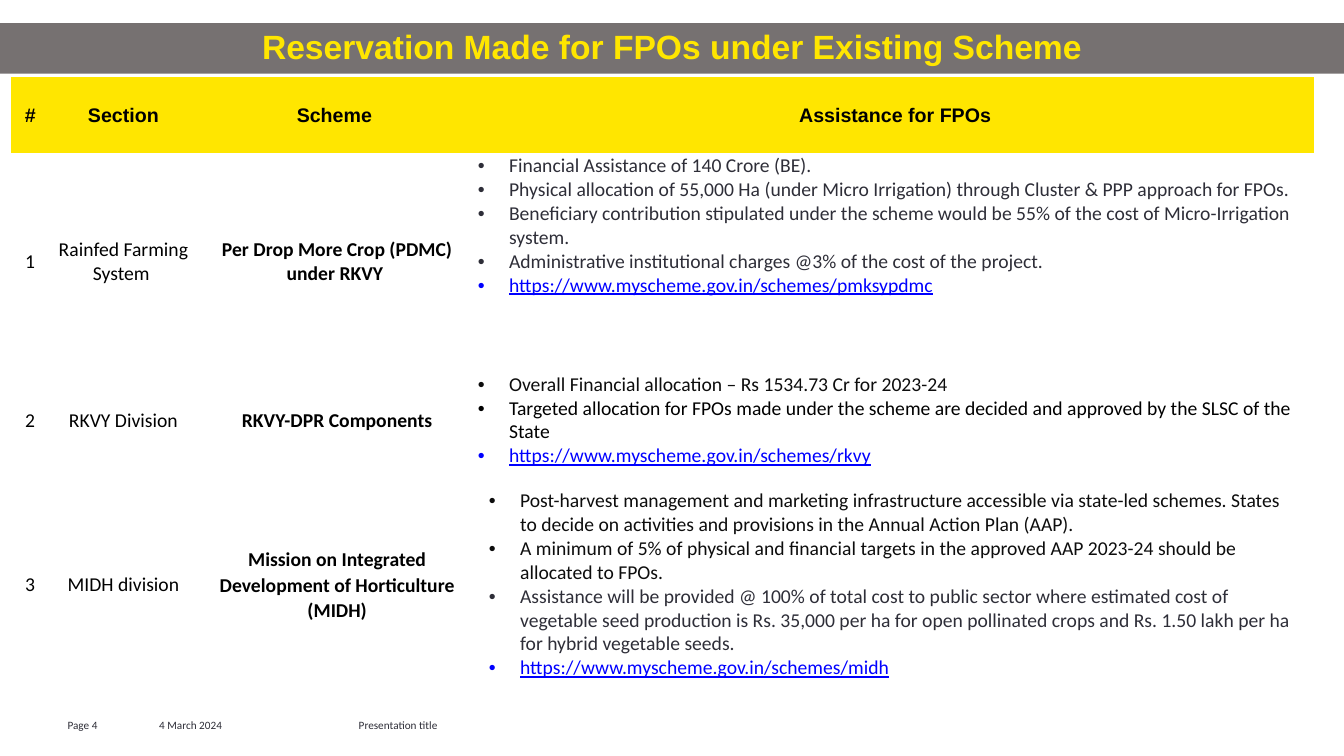
from pptx import Presentation
from pptx.dml.color import RGBColor
from pptx.enum.text import MSO_ANCHOR as Anchor, MSO_AUTO_SIZE as AutoSize, PP_ALIGN as Align
from pptx.oxml.ns import qn
from pptx.util import Inches, Pt
from lxml.etree import SubElement

YELLOW = RGBColor(0xFF, 0xE6, 0x00)
GREY = RGBColor(0x76, 0x71, 0x71)
WHITE = RGBColor(0xFF, 0xFF, 0xFF)
BLACK = RGBColor(0x00, 0x00, 0x00)
NEAR_BLACK = RGBColor(0x0D, 0x0D, 0x0D)
CHARCOAL = RGBColor(0x2E, 0x2E, 0x38)
LINK_BLUE = RGBColor(0x00, 0x00, 0xFF)

PLAIN_TABLE_STYLE = "{2D5ABB26-0587-4C30-8999-92F81FD0307C}"
TITLE = "Reservation Made for FPOs under Existing Scheme"
COLUMN_WIDTHS = [0.38, 1.47, 2.77, 8.3]
ROW_HEIGHTS = [0.76, 2.15, 0.99, 2.28]
HEADINGS = ["#", "Section", "Scheme ", "Assistance for FPOs"]
NARROW_MARGINS = (0.01, 0.01, 0.01, 0)
WIDE_MARGINS = (0.12, 0, 0.12, 0)

SCHEMES = [
    {
        "labels": ["1", "Rainfed Farming System ", "Per Drop More Crop (PDMC) under RKVY "],
        "bullets": [
            ("Financial Assistance of 140 Crore (BE).", CHARCOAL),
            ("Physical allocation of 55,000 Ha (under Micro Irrigation) through Cluster & PPP "
             "approach for FPOs.", CHARCOAL),
            ("Beneficiary contribution stipulated under the scheme would be 55% of the cost of "
             "Micro-Irrigation system.", CHARCOAL),
            ("Administrative institutional charges @3% of the cost of the project.", CHARCOAL),
            ("https://www.myscheme.gov.in/schemes/pmksypdmc", LINK_BLUE),
        ],
        "anchor": Anchor.TOP,
    },
    {
        "labels": ["2", "RKVY Division", "RKVY-DPR Components"],
        "bullets": [
            ("Overall Financial allocation – Rs 1534.73 Cr for 2023-24", NEAR_BLACK),
            ("Targeted allocation for FPOs made under the scheme are decided and approved by "
             "the SLSC of the State", BLACK),
            ("https://www.myscheme.gov.in/schemes/rkvy", LINK_BLUE),
        ],
    },
    {
        "labels": ["3", "MIDH division",
                   "Mission on Integrated Development of Horticulture (MIDH)"],
        "bullets": [
            ("Post-harvest management and marketing infrastructure accessible via state-led "
             "schemes. States to decide on activities and provisions in the Annual Action Plan "
             "(AAP).", NEAR_BLACK),
            ("A minimum of 5% of physical and financial targets in the approved AAP 2023-24 "
             "should be allocated to FPOs.", NEAR_BLACK),
            ("Assistance will be provided @ 100% of total cost to public sector where estimated "
             "cost of vegetable seed production is Rs. 35,000 per ha for open pollinated crops "
             "and Rs. 1.50 lakh per ha for hybrid vegetable seeds.", CHARCOAL),
            ("https://www.myscheme.gov.in/schemes/midh", LINK_BLUE),
        ],
        "margins": WIDE_MARGINS,
        "line_spacing": 1.07,
    },
]

# text, left offset, width, left margin
FOOTER_PARTS = [
    ("Page 4", 0, 0.72, 0),
    ("4 March 2024", 0.81, 1.3, 0.1),
    ("Presentation title", 2.79, 3.37, 0.1),
]


def add_span(para, text, color, **font_values):
    span = para.add_run()
    span.text = text
    values = {"name": "Calibri", "size": Pt(14), "bold": False} | font_values
    for name, value in values.items():
        setattr(span.font, name, value)
    span.font.color.rgb = color


def set_margins(target, margins):
    for side, margin in zip(("left", "top", "right", "bottom"), margins):
        setattr(target, f"margin_{side}", Inches(margin))


def set_bullet(para):
    properties = para._p.get_or_add_pPr()
    properties.set("marL", str(Inches(0.31)))
    properties.set("indent", str(-Inches(0.31)))
    SubElement(properties, qn("a:buFont")).set("typeface", "Arial")
    SubElement(properties, qn("a:buChar")).set("char", "•")


def format_cell(cell, fill, margins=NARROW_MARGINS, anchor=Anchor.MIDDLE):
    cell.fill.solid()
    cell.fill.fore_color.rgb = fill
    cell.vertical_anchor = anchor
    set_margins(cell, margins)


def fill_label(cell, text, line_spacing=1.0, **font_values):
    para = cell.text_frame.paragraphs[0]
    para.alignment = Align.CENTER
    para.line_spacing = line_spacing
    add_span(para, text, BLACK, **font_values)


def fill_bullets(cell, bullets):
    frame = cell.text_frame
    for index, (text, color) in enumerate(bullets):
        para = frame.add_paragraph() if index else frame.paragraphs[0]
        set_bullet(para)
        add_span(para, text, color, underline=color == LINK_BLUE)


def fill_scheme_row(cells, scheme):
    *label_cells, assistance = cells
    margins = scheme.get("margins", NARROW_MARGINS)
    number, section, name = label_cells
    for cell in (number, section):
        format_cell(cell, WHITE)
    format_cell(name, WHITE, margins)
    format_cell(assistance, WHITE, margins, scheme.get("anchor", Anchor.MIDDLE))
    for cell, text in zip(label_cells, scheme["labels"]):
        is_name = cell is name
        spacing = scheme.get("line_spacing", 1.0) if is_name else 1.0
        fill_label(cell, text, spacing, bold=is_name)
    fill_bullets(assistance, scheme["bullets"])


def add_title(slide, left, top, width, height):
    title = slide.shapes.title
    box = {"left": left, "top": top, "width": width, "height": height}
    for name, value in box.items():
        setattr(title, name, Inches(value))
    title.fill.solid()
    title.fill.fore_color.rgb = GREY
    frame = title.text_frame
    frame.auto_size = AutoSize.NONE
    frame.vertical_anchor = Anchor.MIDDLE
    para = frame.paragraphs[0]
    para.alignment = Align.CENTER
    para.line_spacing = 0.9
    add_span(para, TITLE, YELLOW, name="Arial", size=Pt(24), bold=True)


def add_scheme_table(slide, left, top):
    holder = slide.shapes.add_table(
        len(ROW_HEIGHTS), len(COLUMN_WIDTHS), Inches(left), Inches(top),
        Inches(sum(COLUMN_WIDTHS)), Inches(sum(ROW_HEIGHTS)))
    holder.element.xpath(".//a:tableStyleId")[0].text = PLAIN_TABLE_STYLE
    table = holder.table
    table.horz_banding = False
    for column, width in zip(table.columns, COLUMN_WIDTHS):
        column.width = Inches(width)
    for row, height in zip(table.rows, ROW_HEIGHTS):
        row.height = Inches(height)

    header, *scheme_rows = table.rows
    for cell, heading in zip(header.cells, HEADINGS):
        format_cell(cell, YELLOW)
        fill_label(cell, heading, name="Arial", bold=True)
    for row, scheme in zip(scheme_rows, SCHEMES):
        fill_scheme_row(row.cells, scheme)


def add_footer(slide, left, top, height):
    for text, offset, width, left_margin in FOOTER_PARTS:
        box = slide.shapes.add_textbox(
            Inches(left + offset), Inches(top), Inches(width), Inches(height))
        frame = box.text_frame
        frame.word_wrap = True
        set_margins(frame, (left_margin, 0.05, 0.1, 0.05))
        add_span(frame.paragraphs[0], text, CHARCOAL, size=Pt(8))


def main():
    deck = Presentation()
    deck.slide_width, deck.slide_height = Inches(13.33), Inches(7.5)
    slide = deck.slides.add_slide(deck.slide_layouts[5])
    add_title(slide, 0, 0.23, 13.33, 0.5)
    add_scheme_table(slide, 0.11, 0.76)
    add_footer(slide, 0.67, 7.08, 0.2)
    deck.save("out.pptx")


if __name__ == "__main__":
    main()
